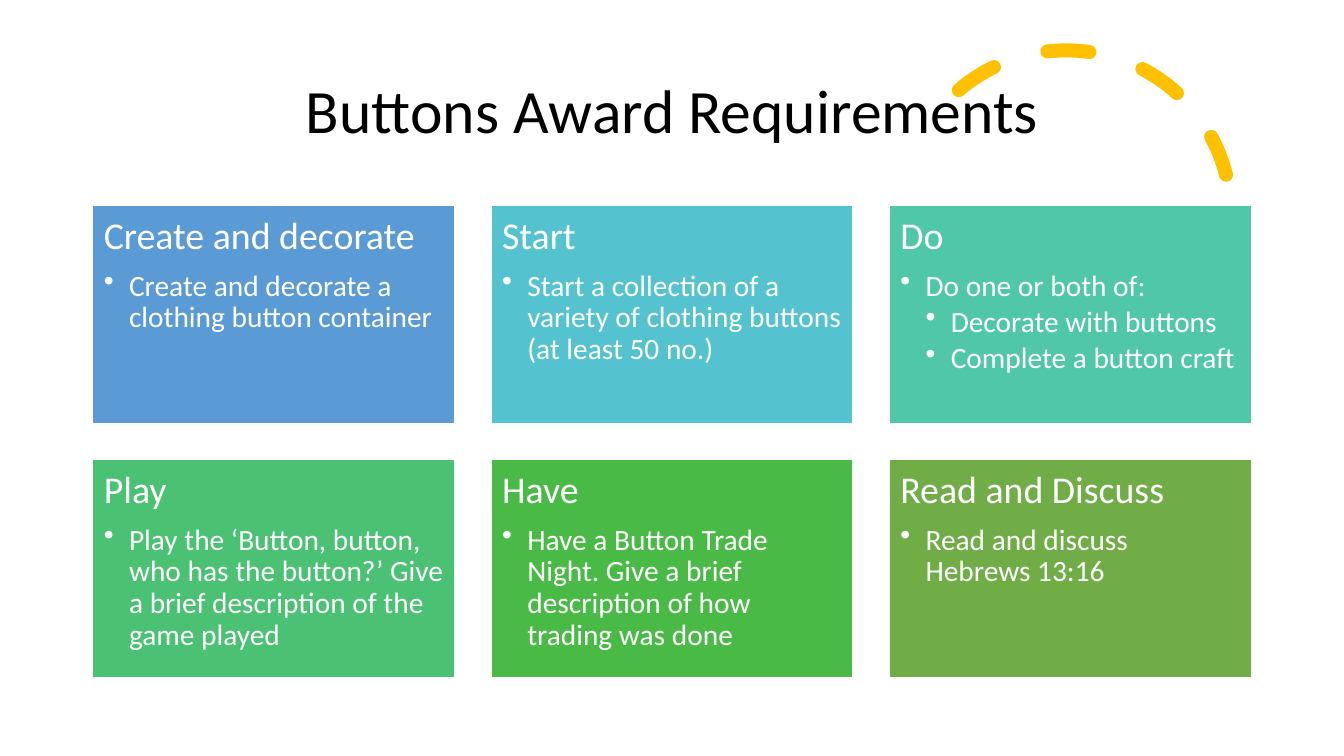
from dataclasses import dataclass

from lxml import etree
from pptx import Presentation
from pptx.dml.color import RGBColor
from pptx.enum.dml import MSO_LINE
from pptx.enum.shapes import MSO_SHAPE
from pptx.enum.text import MSO_ANCHOR, PP_ALIGN
from pptx.oxml.ns import qn
from pptx.util import Inches, Pt

RECTANGLE, ARC = MSO_SHAPE.RECTANGLE, MSO_SHAPE.ARC
DASH = MSO_LINE.DASH
TOP, MIDDLE = MSO_ANCHOR.TOP, MSO_ANCHOR.MIDDLE
LEFT, CENTER = PP_ALIGN.LEFT, PP_ALIGN.CENTER
TITLE_ONLY = 5


@dataclass(frozen=True)
class Theme:
    font: str = "Calibri"
    title_size: int = 44
    heading_size: int = 27
    bullet_size: int = 21
    title_color: str = "000000"
    card_text: str = "FFFFFF"
    card_border: str = "FFFFFF"
    accent: str = "FFC000"
    line_spacing: float = 0.9


THEME = Theme()

# Each card: fill, heading, bullets as (level, text)
CARDS = [
    ("5B9BD5", "Create and decorate",
     [(1, "Create and decorate a clothing button container")]),
    ("55C3CF", "Start",
     [(1, "Start a collection of a variety of clothing buttons (at least 50 no.)")]),
    ("50C8A7", "Do",
     [(1, "Do one or both of:"),
      (2, "Decorate with buttons"),
      (2, "Complete a button craft")]),
    ("4BC174", "Play",
     [(1, "Play the ‘Button, button, who has the button?’ "
          "Give a brief description of the game played")]),
    ("4ABA46", "Have",
     [(1, "Have a Button Trade Night. Give a brief description of how trading was done")]),
    ("70AD47", "Read and Discuss",
     [(1, "Read and discuss\vHebrews 13:16")]),
]
COLUMNS = 3
CARD_WIDTH, CARD_HEIGHT = 3.59, 2.16
GRID_LEFT, GRID_TOP = 0.92, 2.04
COLUMN_STEP, ROW_STEP = 3.95, 2.52
CARD_INSET = 0.11
BULLET_INDENT = 0.25


def format_paragraph(paragraph, size, color, alignment):
    paragraph.alignment = alignment
    paragraph.line_spacing = THEME.line_spacing
    paragraph.font.name = THEME.font
    paragraph.font.size = Pt(size)
    paragraph.font.color.rgb = RGBColor.from_string(color)


def set_bullet(paragraph, level):
    paragraph.level = level
    properties = paragraph._p.get_or_add_pPr()
    properties.set("marL", str(Inches(BULLET_INDENT * level)))
    properties.set("indent", str(Inches(-BULLET_INDENT)))
    etree.SubElement(properties, qn("a:buChar"), char="•")


def set_title(slide, text):
    title = slide.shapes.title
    title.left, title.top = Inches(0.92), Inches(0.4)
    title.width, title.height = Inches(11.5), Inches(1.45)
    title.text_frame.text = text
    title.text_frame.vertical_anchor = MIDDLE
    format_paragraph(title.text_frame.paragraphs[0], THEME.title_size,
                     THEME.title_color, CENTER)


def add_dashed_arc(slide):
    arc = slide.shapes.add_shape(ARC, Inches(8.94), Inches(0.5),
                                 Inches(3.27), Inches(3.27))
    arc.adjustments[0] = 146.129
    arc.adjustments[1] = 0
    arc.rotation = 345.8
    arc.shadow.inherit = False
    arc.fill.background()
    arc.line.color.rgb = RGBColor.from_string(THEME.accent)
    arc.line.width = Pt(10)
    arc.line.dash_style = DASH
    arc.line._get_or_add_ln().set("cap", "rnd")
    # The arc lies behind the title
    slide.shapes.title.element.addprevious(arc.element)


def add_card(slide, left, top, fill, heading, bullets):
    card = slide.shapes.add_shape(RECTANGLE, Inches(left), Inches(top),
                                  Inches(CARD_WIDTH), Inches(CARD_HEIGHT))
    card.shadow.inherit = False
    card.fill.solid()
    card.fill.fore_color.rgb = RGBColor.from_string(fill)
    card.line.color.rgb = RGBColor.from_string(THEME.card_border)
    card.line.width = Pt(1)

    frame = card.text_frame
    frame.word_wrap = True
    frame.vertical_anchor = TOP
    frame.margin_left = frame.margin_right = Inches(CARD_INSET)
    frame.margin_top = frame.margin_bottom = Inches(CARD_INSET)

    # Heading
    heading_line = frame.paragraphs[0]
    heading_line.text = heading
    heading_line.space_after = Pt(THEME.heading_size * 0.35)
    format_paragraph(heading_line, THEME.heading_size, THEME.card_text, LEFT)

    # Bullets
    for level, text in bullets:
        bullet = frame.add_paragraph()
        bullet.text = text
        set_bullet(bullet, level)
        bullet.space_after = Pt(THEME.bullet_size * 0.15)
        format_paragraph(bullet, THEME.bullet_size, THEME.card_text, LEFT)


def main():
    presentation = Presentation()
    presentation.slide_width = Inches(13.33)
    presentation.slide_height = Inches(7.5)
    slide = presentation.slides.add_slide(presentation.slide_layouts[TITLE_ONLY])

    # Title and its ornament
    set_title(slide, "Buttons Award Requirements")
    add_dashed_arc(slide)

    # Grid of requirement cards
    for index, (fill, heading, bullets) in enumerate(CARDS):
        row, column = divmod(index, COLUMNS)
        add_card(slide, GRID_LEFT + column * COLUMN_STEP,
                 GRID_TOP + row * ROW_STEP, fill, heading, bullets)

    presentation.save("out.pptx")


if __name__ == "__main__":
    main()
